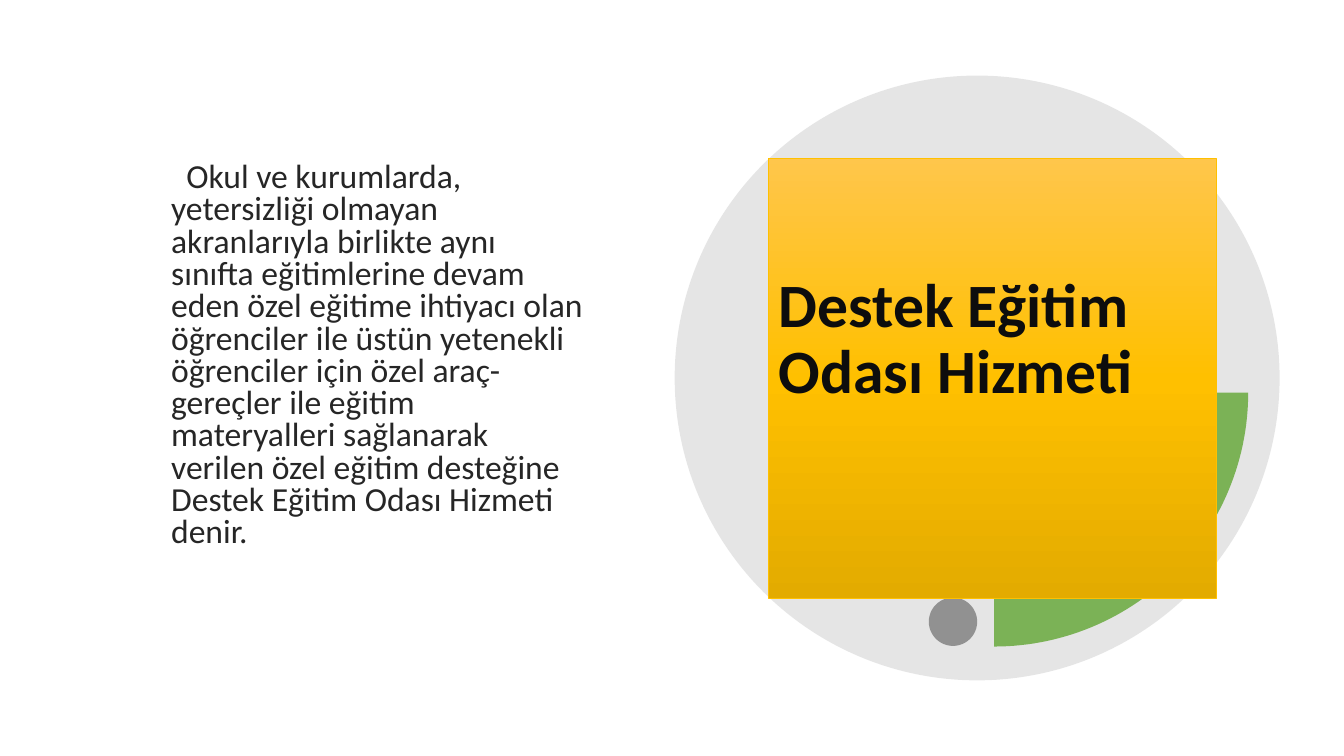
from math import cos, pi, sin
from lxml.etree import SubElement
from pptx import Presentation
from pptx.dml.color import RGBColor
from pptx.enum.shapes import MSO_SHAPE
from pptx.enum.text import MSO_ANCHOR, MSO_AUTO_SIZE, PP_ALIGN
from pptx.oxml import parse_xml
from pptx.oxml.ns import nsdecls, qn
from pptx.util import Inches, Pt

TITLE = "Destek Eğitim Odası Hizmeti"
BODY = (
    "Okul ve kurumlarda, yetersizliği olmayan akranlarıyla birlikte aynı "
    "sınıfta eğitimlerine devam eden özel eğitime ihtiyacı olan öğrenciler "
    "ile üstün yetenekli öğrenciler için özel araç-gereçler ile eğitim "
    "materyalleri sağlanarak verilen özel eğitim desteğine Destek Eğitim "
    "Odası Hizmeti denir."
)
WIDE, HIGH = 13.33, 7.5
STOPS = {0: "FFC64B", 50: "FFC000", 100: "E3AB00"}


def color(code):
    return RGBColor.from_string(code)


def apply(item, form):
    for name, value in form.items():
        setattr(item, name, value)


def place(shape, box):
    names = ("left", "top", "width", "height")
    apply(shape, dict(zip(names, map(Inches, box))))


def paint(shape, code, alpha):
    shape.shadow.inherit = False
    shape.line.fill.background()
    shape.fill.solid()
    shape.fill.fore_color.rgb = color(code)
    tint = shape.fill._xPr.find(qn("a:solidFill"))[0]
    SubElement(tint, qn("a:alpha"), val=str(alpha * 1000))


def write(shape, text, frame, para, font, code):
    apply(shape.text_frame, frame)
    line = shape.text_frame.paragraphs[0]
    line.text = text
    apply(line, para)
    face = line.runs[0].font
    apply(face, {"name": "Calibri", **font})
    face.color.rgb = color(code)
    return line


def add_disc(slide, box, code, alpha):
    disc = slide.shapes.add_shape(MSO_SHAPE.OVAL, *map(Inches, box))
    paint(disc, code, alpha)


def add_ring(slide, box, inner, code, alpha):
    left, top, wide, high = box
    turns = [pi / 2 * step / 60 for step in range(61)]

    def arc(share, turns):
        return [
            (Inches(left + wide * share * cos(turn)),
             Inches(top + high * share * sin(turn)))
            for turn in turns
        ]

    points = arc(1, turns) + arc(inner, reversed(turns))
    path = slide.shapes.build_freeform(*points[0])
    path.add_line_segments(points[1:], close=True)
    paint(path.convert_to_shape(), code, alpha)


def add_title(slide, box):
    card = slide.shapes.title
    place(card, box)
    slide.shapes._spTree.append(card._element)
    stops = "".join(
        f'<a:gs pos="{spot * 1000}"><a:srgbClr val="{code}"/></a:gs>'
        for spot, code in STOPS.items()
    )
    parts = (
        f'<a:prstGeom {nsdecls("a")} prst="roundRect"><a:avLst/></a:prstGeom>',
        f'<a:gradFill {nsdecls("a")} rotWithShape="1"><a:gsLst>{stops}</a:gsLst>'
        '<a:lin ang="5400000" scaled="0"/></a:gradFill>',
    )
    for part in parts:
        card._element.spPr.append(parse_xml(part))
    card.line.color.rgb = color("FFC000")
    card.line.width = Pt(0.5)
    frame = {
        "word_wrap": True,
        "auto_size": MSO_AUTO_SIZE.NONE,
        "vertical_anchor": MSO_ANCHOR.MIDDLE,
        "margin_bottom": Inches(0.8),
    }
    para = {
        "alignment": PP_ALIGN.LEFT,
        "line_spacing": 0.9,
        "space_before": Pt(0),
        "space_after": Pt(0),
    }
    write(card, TITLE, frame, para, {"size": Pt(44), "bold": True}, "0D0D0D")


def add_body(slide, box):
    note = slide.shapes.add_textbox(*map(Inches, box))
    frame = {"word_wrap": True, "vertical_anchor": MSO_ANCHOR.TOP}
    para = {"line_spacing": 0.8, "space_after": Pt(6)}
    line = write(note, BODY, frame, para, {"size": Pt(24)}, "262626")
    apply_to = line._p.get_or_add_pPr()
    apply_to.set("marL", "0")
    apply_to.set("indent", str(Inches(0.15)))


def add_art(slide, box):
    left, top, wide, high = box
    add_disc(slide, box, "808080", 20)
    dot = 0.08 * wide
    add_disc(slide, (left + 0.42 * wide, top + 0.863 * high, dot, dot),
             "595959", 60)
    reach = 0.42 * wide
    add_ring(slide, (left + 0.528 * wide, top + 0.524 * high, reach, reach),
             0.79, "70AD47", 90)


def main():
    deck = Presentation()
    apply(deck, {"slide_width": Inches(WIDE), "slide_height": Inches(HIGH)})
    slide = deck.slides.add_slide(deck.slide_layouts[5])
    top, high = 0.209 * HIGH, 0.583 * HIGH
    add_art(slide, (0.502 * WIDE, 0.1 * HIGH, 0.8 * HIGH, 0.8 * HIGH))
    add_title(slide, (0.572 * WIDE, top, 0.333 * WIDE, high))
    add_body(slide, (0.12 * WIDE, top, 0.323 * WIDE, high))
    deck.save("out.pptx")


if __name__ == "__main__":
    main()
